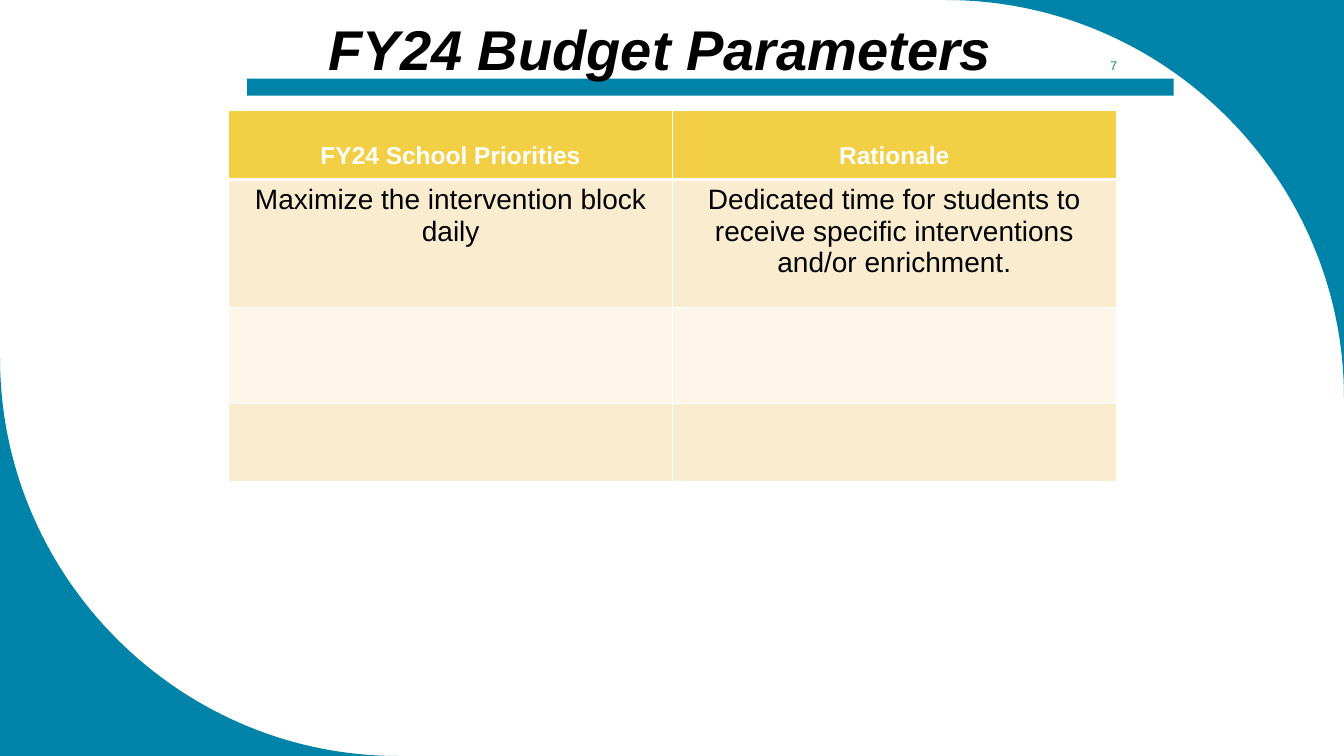
from lxml import etree
from pptx import Presentation
from pptx.dml.color import RGBColor
from pptx.enum.shapes import MSO_SHAPE
from pptx.enum.text import MSO_ANCHOR, PP_ALIGN
from pptx.oxml.ns import qn
from pptx.util import Inches, Pt

CENTER = PP_ALIGN.CENTER
TOP, MIDDLE, BOTTOM = MSO_ANCHOR.TOP, MSO_ANCHOR.MIDDLE, MSO_ANCHOR.BOTTOM
RECTANGLE = MSO_SHAPE.RECTANGLE

TITLE = "FY24 Budget Parameters"
PAGE_NUMBER = "7"
ROWS = [
    ("FY24 School Priorities", "Rationale"),
    ("Maximize the intervention block daily",
     "Dedicated time for students to receive specific interventions and/or enrichment."),
    ("", ""),
    ("", ""),
]
ROW_HEIGHTS = [0.68, 1.27, 0.95, 0.78]
ROW_FILLS = ["F3CF45", "FAEDCF", "FDF6E9", "FAEDCF"]
COLUMN_WIDTH = 4.4
TABLE_LEFT, TABLE_TOP = 2.27, 1.1

WIDTH, HEIGHT, RADIUS = 13.33, 7.5, 3.95
ARC_PULL = 0.55
BLUE, GREEN, WHITE, BLACK = "0083A9", "159839", "FFFFFF", "000000"


def color(value):
    return RGBColor.from_string(value)


def paint(shape, value):
    shape.shadow.inherit = False
    shape.fill.solid()
    shape.fill.fore_color.rgb = color(value)
    shape.line.fill.background()


def write(frame, text, size, value, bold=False, italic=False):
    para = frame.paragraphs[0]
    para.alignment = CENTER
    span = para.add_run()
    span.text = text
    font = span.font
    font.name, font.size, font.bold, font.italic = "Arial", Pt(size), bold, italic
    font.color.rgb = color(value)


def add_text(page, place, text, anchor, *style):
    frame = page.shapes.add_textbox(*map(Inches, place)).text_frame
    frame.word_wrap = True
    frame.vertical_anchor = anchor
    write(frame, text, *style)


def add_corner(page, start, end, corner):
    """Fill the space between a slide corner and a quarter circle from start to end."""
    start, end, corner = [tuple(map(Inches, point)) for point in (start, end, corner)]
    builder = page.shapes.build_freeform(*start)
    builder.add_line_segments([end, corner], close=True)
    shape = builder.convert_to_shape()
    paint(shape, BLUE)

    arc = next(shape._element.iter(qn("a:lnTo")))
    curve = etree.Element(qn("a:cubicBezTo"))
    pulled = [tuple(a + ARC_PULL * (c - a) for a, c in zip(point, corner))
              for point in (start, end)]
    for x, y in pulled + [end]:
        etree.SubElement(curve, qn("a:pt"),
                         x=str(int(x - shape.left)), y=str(int(y - shape.top)))
    arc.getparent().replace(arc, curve)


def add_borders(cell, bottom_width):
    properties = cell._tc.get_or_add_tcPr()
    widths = {"a:lnL": 1, "a:lnR": 1, "a:lnT": 1, "a:lnB": bottom_width}
    for position, (tag, width) in enumerate(widths.items()):
        line = etree.Element(qn(tag), w=str(Pt(width)))
        fill = etree.SubElement(line, qn("a:solidFill"))
        etree.SubElement(fill, qn("a:srgbClr"), val=WHITE)
        properties.insert(position, line)


def add_priorities(page):
    columns = len(ROWS[0])
    table = page.shapes.add_table(
        len(ROWS), columns, Inches(TABLE_LEFT), Inches(TABLE_TOP),
        Inches(COLUMN_WIDTH * columns), Inches(sum(ROW_HEIGHTS))).table
    for column in table.columns:
        column.width = Inches(COLUMN_WIDTH)
    for index, texts in enumerate(ROWS):
        header = index == 0
        table.rows[index].height = Inches(ROW_HEIGHTS[index])
        for cell, text in zip(table.rows[index].cells, texts):
            cell.fill.solid()
            cell.fill.fore_color.rgb = color(ROW_FILLS[index])
            add_borders(cell, 3 if header else 1)
            cell.vertical_anchor = BOTTOM if header else TOP
            if header:
                cell.margin_bottom = Inches(0.1)
                write(cell.text_frame, text, 17.5, WHITE, True)
            elif text:
                write(cell.text_frame, text, 20, BLACK)


def main():
    deck = Presentation()
    deck.slide_width, deck.slide_height = Inches(WIDTH), Inches(HEIGHT)
    page = deck.slides.add_slide(deck.slide_layouts[6])

    add_corner(page, (WIDTH - RADIUS, 0), (WIDTH, RADIUS), (WIDTH, 0))
    add_corner(page, (RADIUS, HEIGHT), (0, HEIGHT - RADIUS), (0, HEIGHT))
    bar = page.shapes.add_shape(RECTANGLE, *map(Inches, (2.45, 0.78, 9.19, 0.17)))
    paint(bar, BLUE)
    add_text(page, (3.05, 0.09, 6.99, 0.77), TITLE, BOTTOM, 40, BLACK, True, True)
    add_priorities(page)
    add_text(page, (10.64, 0.5, 0.81, 0.3), PAGE_NUMBER, MIDDLE, 9, GREEN)

    deck.save("out.pptx")


if __name__ == "__main__":
    main()
